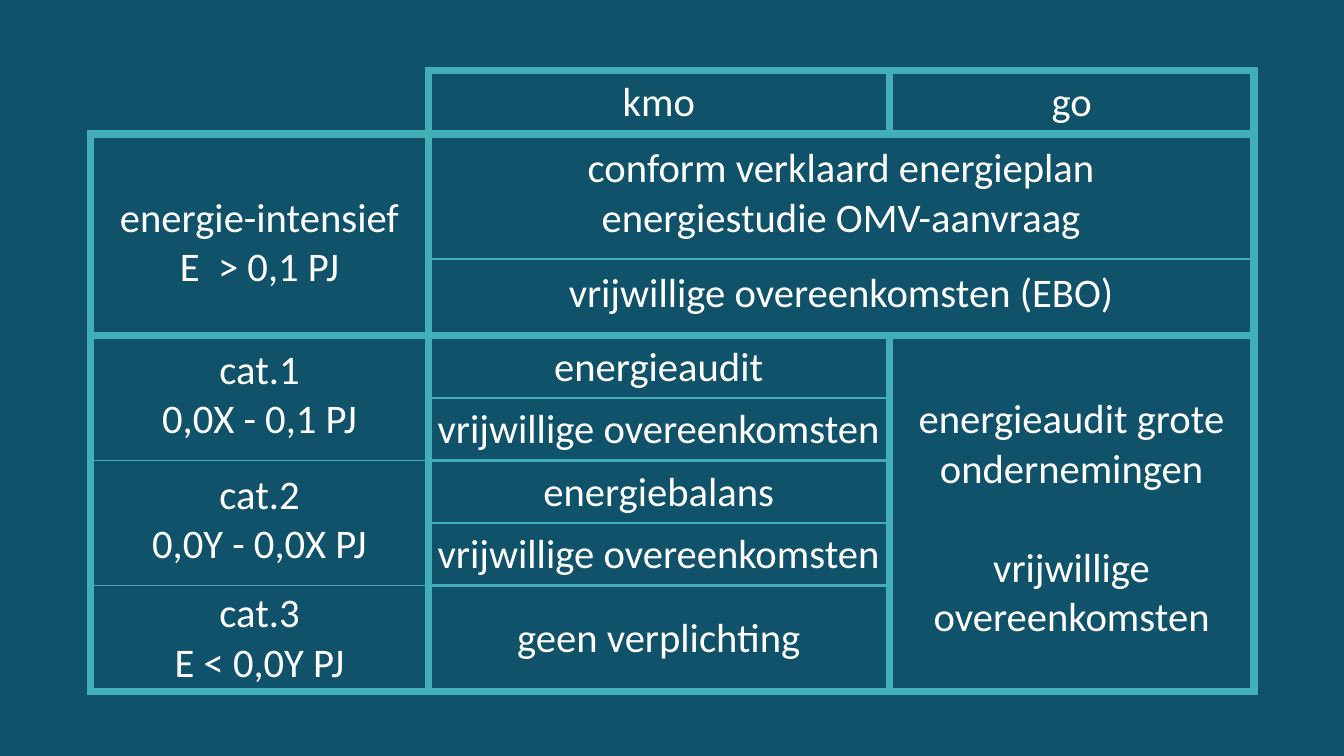
from lxml import etree
from pptx import Presentation
from pptx.dml.color import RGBColor
from pptx.enum.text import MSO_ANCHOR, PP_ALIGN
from pptx.oxml.ns import qn
from pptx.util import Inches, Pt

PETROL = RGBColor(0x10, 0x52, 0x69)
TURQUOISE = RGBColor(0x42, 0xAF, 0xB6)
WHITE = RGBColor(0xFF, 0xFF, 0xFF)
THICK, MEDIUM, THIN = 6, 2.25, 1.5
LINE_HEIGHT = 35.4  # one line of 29 pt text, in points


def add_border(cell, side, width):
    """Draw one side of a cell; a width of 0 leaves it open."""
    line = etree.SubElement(cell._tc.get_or_add_tcPr(), qn("a:ln" + side), w=str(int(Pt(width))))
    if width:
        fill = etree.SubElement(line, qn("a:solidFill"))
        etree.SubElement(fill, qn("a:srgbClr"), val=str(TURQUOISE))
    else:
        etree.SubElement(line, qn("a:noFill"))


presentation = Presentation()
presentation.slide_width = Inches(13.33)
presentation.slide_height = Inches(7.5)
slide = presentation.slides.add_slide(presentation.slide_layouts[6])
slide.background.fill.solid()
slide.background.fill.fore_color.rgb = PETROL

# Table grid
column_widths = [3.35, 4.57, 3.62]
row_heights = [0.63, 1.24, 0.76, 0.62, 0.62, 0.62, 0.62, 1.05]
table = slide.shapes.add_table(
    len(row_heights), len(column_widths), Inches(0.9), Inches(0.7),
    Inches(sum(column_widths)), Inches(sum(row_heights))).table
table.first_row = False
table.horz_banding = False
for column, width in zip(table.columns, column_widths):
    column.width = Inches(width)
for row, height in zip(table.rows, row_heights):
    row.height = Inches(height)

# Row, column, row span, column span, top line, bottom line, top margin, text
# A top margin of None centres the text vertically
entries = [
    (0, 0, 1, 1, 0, THICK, None, ""),
    (0, 1, 1, 1, THICK, THICK, None, "kmo"),
    (0, 2, 1, 1, THICK, THICK, None, "go"),
    (1, 0, 2, 1, THICK, THICK, 0.59, "energie-intensief\vE  > 0,1 PJ"),
    (1, 1, 1, 2, THICK, THIN, 0.1, "conform verklaard energieplan\venergiestudie OMV-aanvraag"),
    (2, 1, 1, 2, THIN, THICK, 0.1, "vrijwillige overeenkomsten (EBO)"),
    (3, 0, 2, 1, THICK, THIN, 0.1, "cat.1\v0,0X - 0,1 PJ"),
    (3, 1, 1, 1, THICK, THIN, None, "energieaudit"),
    (3, 2, 5, 1, THICK, THICK, 0.59,
     "energieaudit grote ondernemingen\nvrijwillige overeenkomsten"),
    (4, 1, 1, 1, THIN, MEDIUM, None, "vrijwillige overeenkomsten"),
    (5, 0, 2, 1, THIN, THIN, 0.1, "cat.2\v0,0Y - 0,0X PJ"),
    (5, 1, 1, 1, MEDIUM, THIN, None, "energiebalans"),
    (6, 1, 1, 1, THIN, MEDIUM, None, "vrijwillige overeenkomsten"),
    (7, 0, 1, 1, THIN, THICK, None, "cat.3\vE < 0,0Y PJ"),
    (7, 1, 1, 1, MEDIUM, THICK, None, "geen verplichting"),
]

for row, column, row_span, column_span, top, bottom, top_margin, text in entries:
    # Borders and fill for every cell of the span
    for r in range(row, row + row_span):
        for c in range(column, column + column_span):
            part = table.cell(r, c)
            add_border(part, "L", THICK if text else 0)
            add_border(part, "R", THICK)
            add_border(part, "T", top)
            add_border(part, "B", bottom)
            part.fill.background()

    cell = table.cell(row, column)
    if row_span * column_span > 1:
        cell.merge(table.cell(row + row_span - 1, column + column_span - 1))

    # Margins and anchor
    centred = top_margin is None
    cell.vertical_anchor = MSO_ANCHOR.MIDDLE if centred else MSO_ANCHOR.TOP
    cell.margin_left = cell.margin_right = Inches(0.01 if centred else 0.2)
    cell.margin_top = Inches(0.01 if centred else top_margin)
    cell.margin_bottom = Inches(0 if centred else 0.1)

    # Text
    cell.text_frame.text = text
    for index, paragraph in enumerate(cell.text_frame.paragraphs):
        paragraph.alignment = PP_ALIGN.CENTER
        paragraph.font.name = "Calibri"
        paragraph.font.size = Pt(29)
        paragraph.font.color.rgb = WHITE
        if index:
            paragraph.space_before = Pt(LINE_HEIGHT)

presentation.save("out.pptx")
